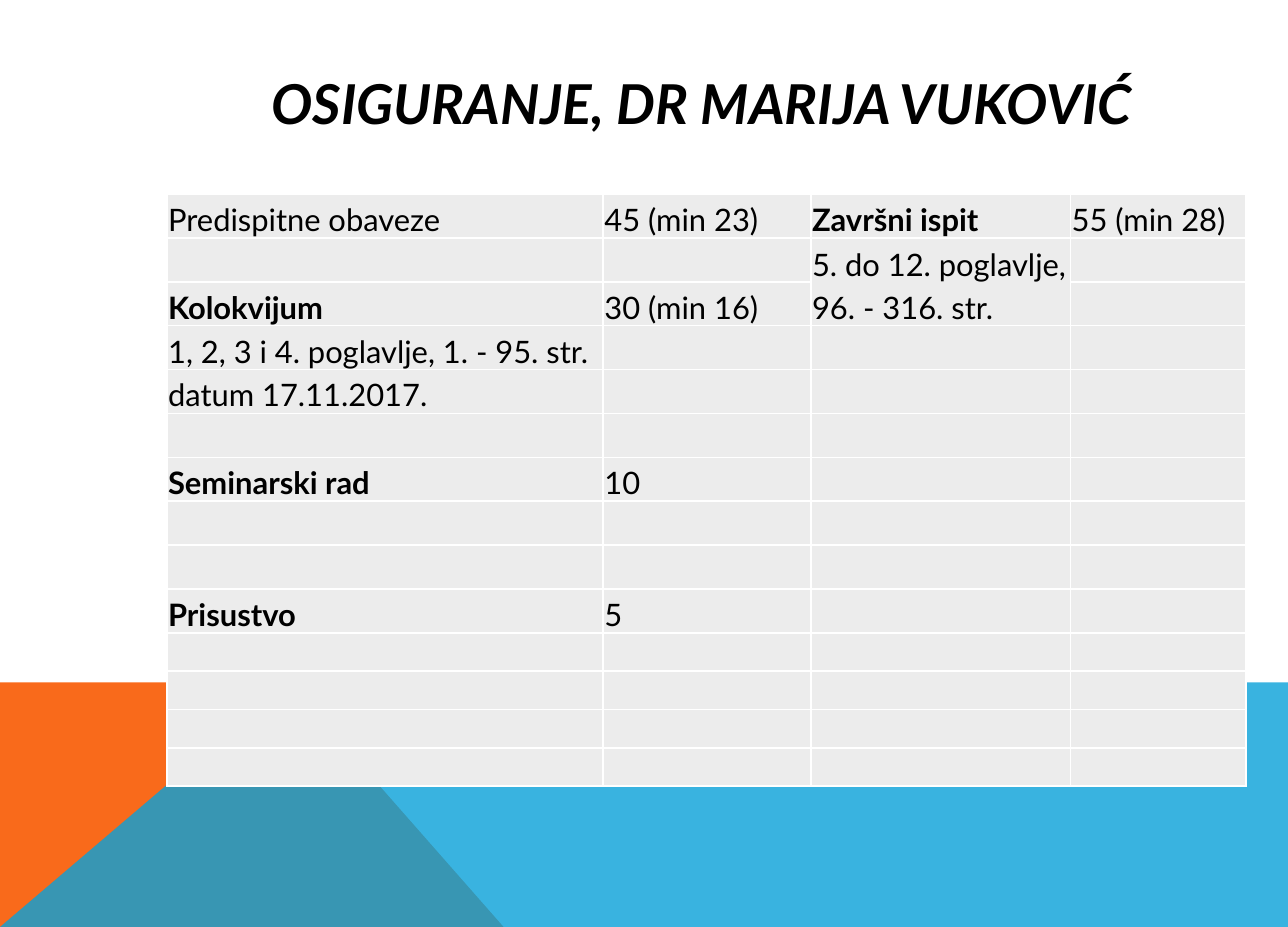
"""Build the course grading slide: a title, a points table and two floor shapes."""
import lxml.etree
import pptx
import pptx.dml.color
import pptx.enum.text
import pptx.oxml.ns
import pptx.util

WIDTH, HEIGHT = 10.42, 7.5
FONT = "Lato"
TITLE = "OSIGURANJE, DR MARIJA VUKOVIĆ"
TITLE_BOX = (1.27, 0.36, 8.82, 0.94)
BLACK, WHITE, GREY = "000000", "FFFFFF", "ECECEC"
HORIZON = 0.736
FLOOR = [
    ("F96A1B", 100, [(0, 1), (0, HORIZON), (0.224, HORIZON), (0.391, 1)]),
    ("08A1D9", 80, [(0, 1), (0.223, HORIZON), (1, HORIZON), (1, 1)]),
]
TABLE_LEFT, TABLE_TOP = 1.35, 1.57
COLUMNS = [3.53, 1.68, 2.1, 1.42]
ROWS = [0.355] * 10 + [0.31] * 4
CELLS = {
    (0, 0): "Predispitne obaveze",
    (0, 1): "45 (min 23)",
    (0, 2): "Završni ispit",
    (0, 3): "55 (min 28)",
    (1, 2): "5. do 12. poglavlje, 96. - 316. str.",
    (2, 0): "Kolokvijum",
    (2, 1): "30 (min 16)",
    (3, 0): "1, 2, 3 i 4. poglavlje, 1. - 95. str.",
    (4, 0): "datum 17.11.2017.",
    (6, 0): "Seminarski rad",
    (6, 1): "10",
    (9, 0): "Prisustvo",
    (9, 1): "5",
}
BOLD = {(0, 2), (2, 0), (6, 0), (9, 0)}


def paint(fill, color):
    fill.solid()
    fill.fore_color.rgb = pptx.dml.color.RGBColor.from_string(color)


def add_run(p, text, size, bold=False, italic=False):
    r = p.add_run()
    r.text = text
    r.font.name, r.font.size = FONT, pptx.util.Pt(size)
    r.font.bold, r.font.italic = bold, italic
    paint(r.font.fill, BLACK)


def add_floor(s, color, opacity, shares):
    points = [(pptx.util.Inches(x * WIDTH), pptx.util.Inches(y * HEIGHT)) for x, y in shares]
    builder = s.shapes.build_freeform(*points[0], scale=1.0)
    builder.add_line_segments(points[1:], close=True)
    sp = builder.convert_to_shape()
    sp.shadow.inherit = False
    sp.line.fill.background()
    paint(sp.fill, color)
    if opacity < 100:
        tone = sp.fill._xPr.find(".//" + pptx.oxml.ns.qn("a:srgbClr"))
        lxml.etree.SubElement(tone, pptx.oxml.ns.qn("a:alpha"), val=str(opacity * 1000))


def add_title(s):
    tf = s.shapes.add_textbox(*map(pptx.util.Inches, TITLE_BOX)).text_frame
    tf.word_wrap = True
    tf.vertical_anchor = pptx.enum.text.MSO_ANCHOR.MIDDLE
    p = tf.paragraphs[0]
    p.alignment = pptx.enum.text.PP_ALIGN.CENTER
    add_run(p, TITLE, 32, bold=True, italic=True)


def add_borders(cell):
    qn = pptx.oxml.ns.qn
    props = cell._tc.get_or_add_tcPr()
    for i, side in enumerate(("lnL", "lnR", "lnT", "lnB")):
        ln = lxml.etree.Element(qn("a:" + side), w=str(pptx.util.Pt(1)))
        fill = lxml.etree.SubElement(ln, qn("a:solidFill"))
        lxml.etree.SubElement(fill, qn("a:srgbClr"), val=WHITE)
        props.insert(i, ln)


def style_cell(cell):
    cell.margin_left = cell.margin_right = cell.margin_top = pptx.util.Inches(0.01)
    cell.margin_bottom = 0
    cell.vertical_anchor = pptx.enum.text.MSO_ANCHOR.BOTTOM
    paint(cell.fill, GREY)
    add_borders(cell)


def add_points_table(s):
    box = (TABLE_LEFT, TABLE_TOP, sum(COLUMNS), sum(ROWS))
    table = s.shapes.add_table(len(ROWS), len(COLUMNS), *map(pptx.util.Inches, box)).table
    table.first_row = table.horz_banding = False
    for column, width in zip(table.columns, COLUMNS):
        column.width = pptx.util.Inches(width)
    for row, height in zip(table.rows, ROWS):
        row.height = pptx.util.Inches(height)
    for cell in table.iter_cells():
        style_cell(cell)
    table.cell(1, 2).merge(table.cell(2, 2))
    for place, text in CELLS.items():
        p = table.cell(*place).text_frame.paragraphs[0]
        p.line_spacing, p.space_after = 1.15, pptx.util.Pt(10)
        add_run(p, text, 18, bold=place in BOLD)


def main():
    prs = pptx.Presentation()
    prs.slide_width, prs.slide_height = pptx.util.Inches(WIDTH), pptx.util.Inches(HEIGHT)
    s = prs.slides.add_slide(prs.slide_layouts[6])
    for color, opacity, shares in FLOOR:
        add_floor(s, color, opacity, shares)
    add_title(s)
    add_points_table(s)
    prs.save("out.pptx")


if __name__ == "__main__":
    main()
